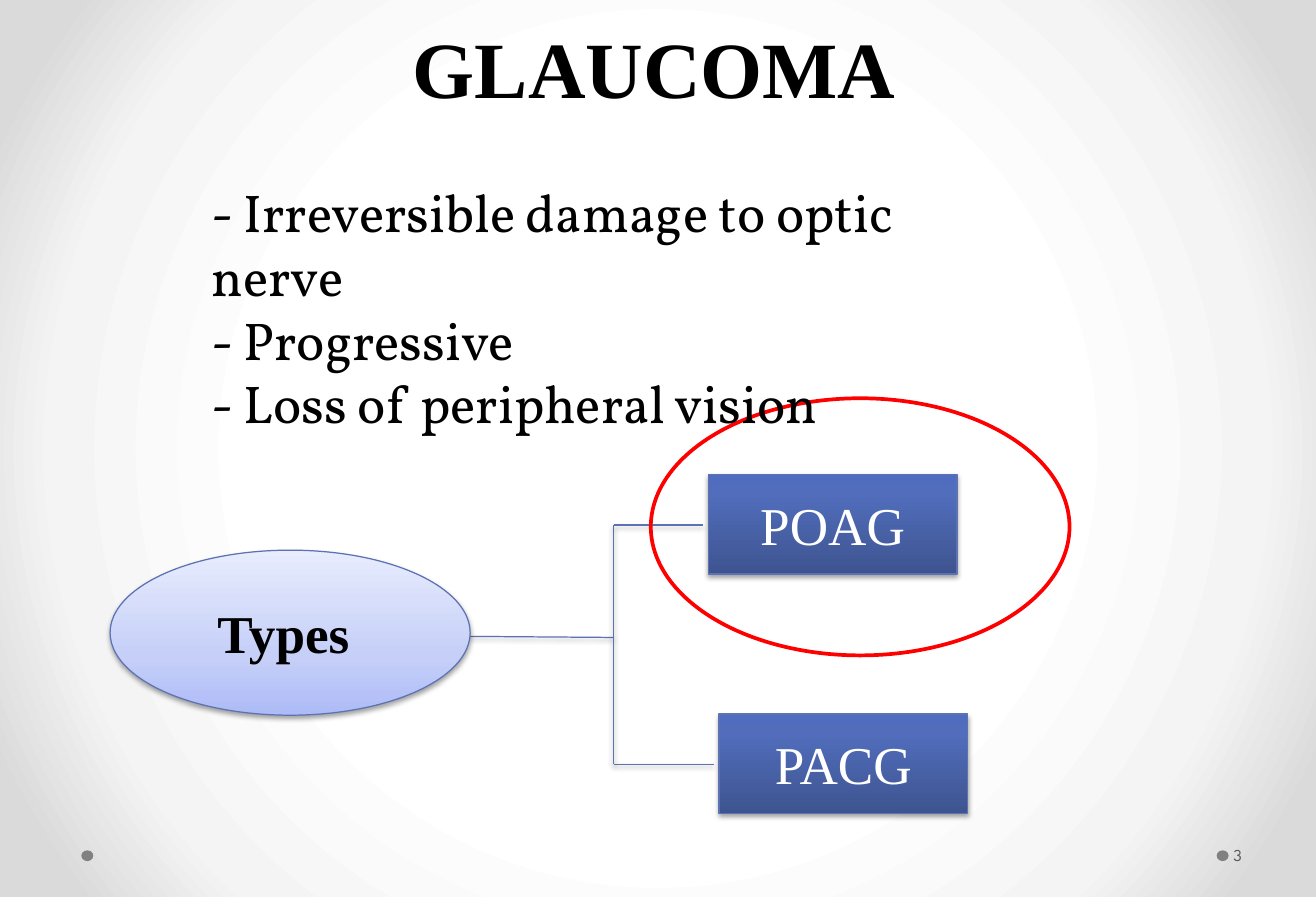
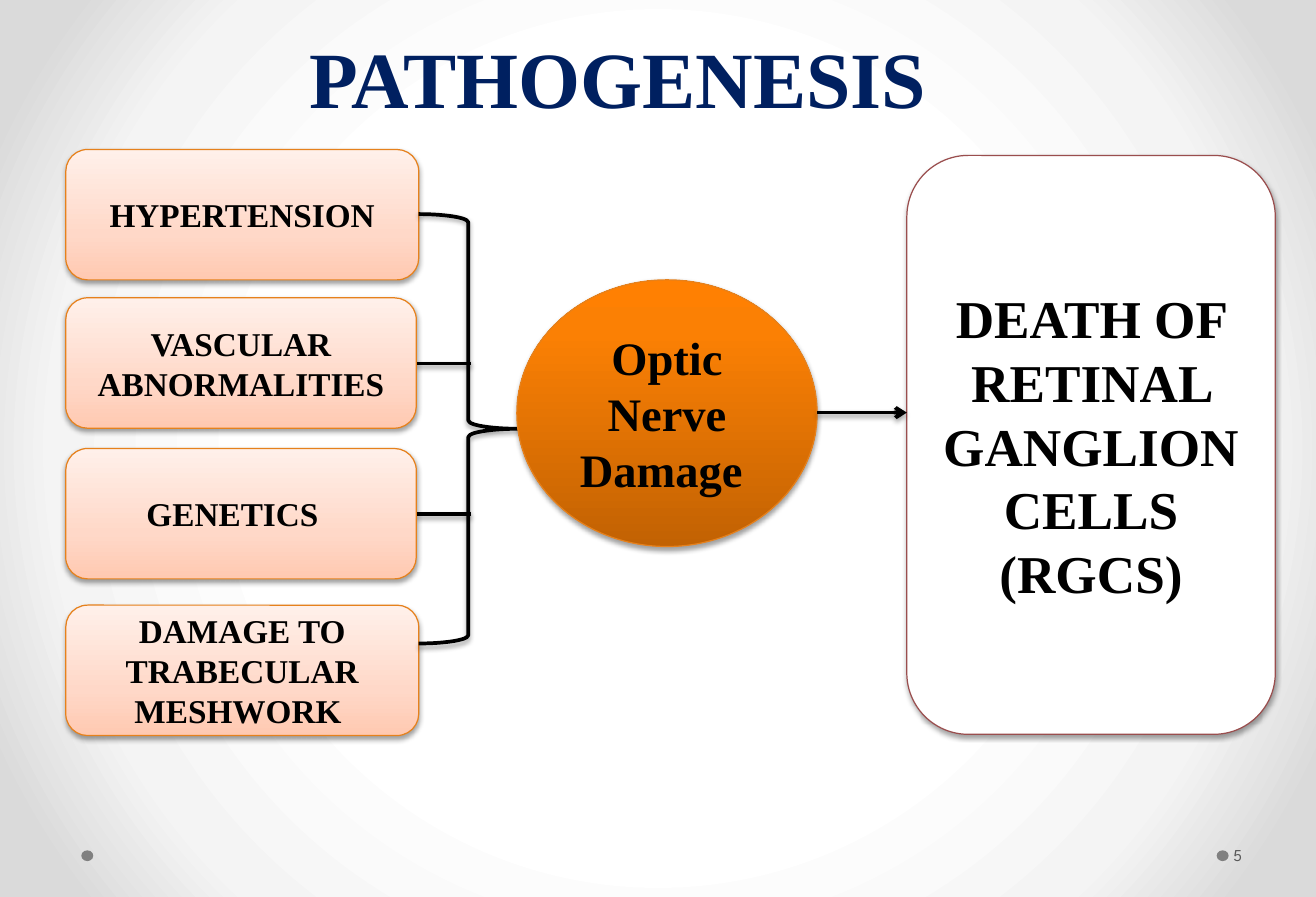
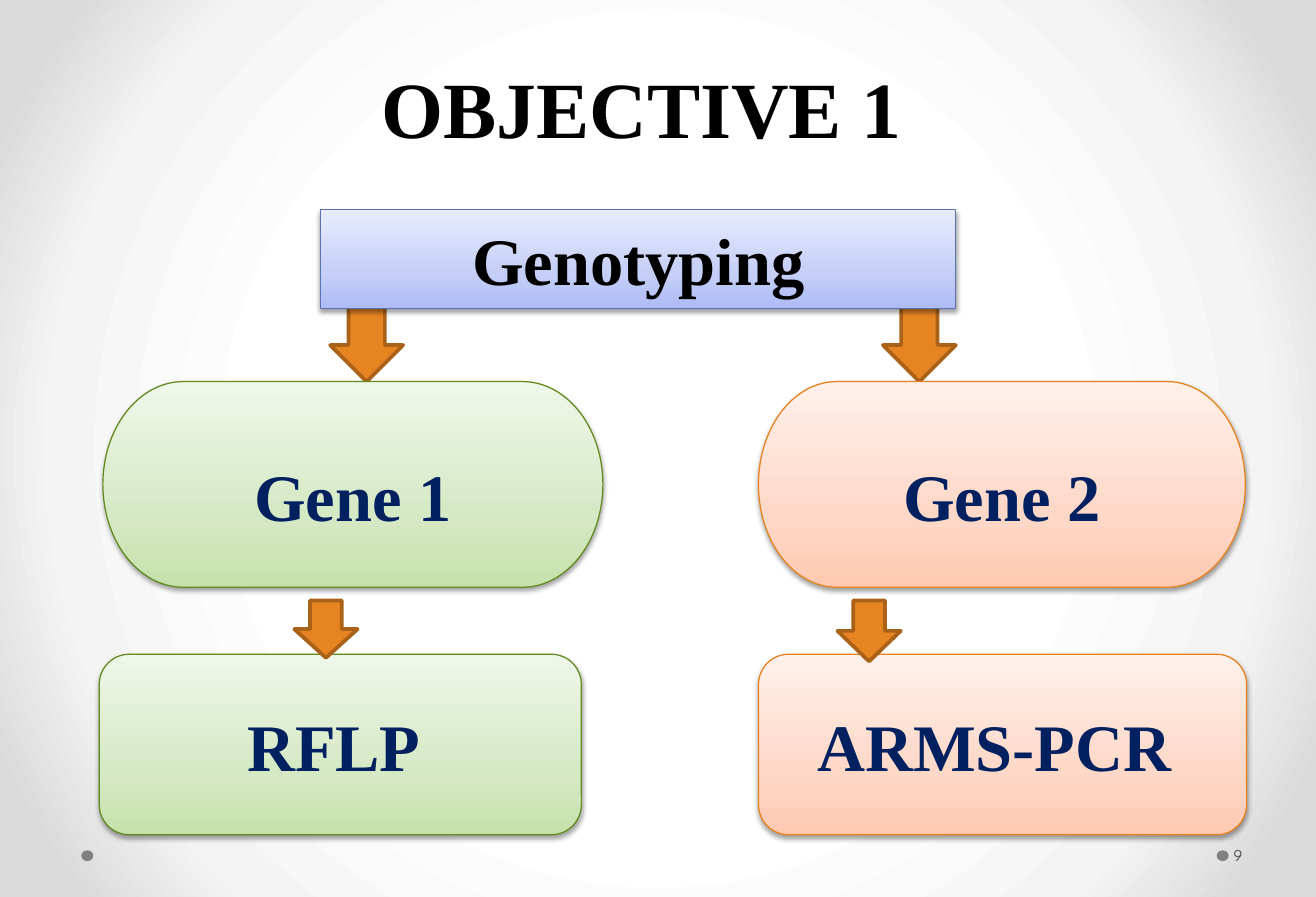
from lxml.etree import SubElement
from pptx import Presentation
from pptx.dml.color import RGBColor
from pptx.enum.shapes import MSO_CONNECTOR, MSO_SHAPE
from pptx.enum.text import MSO_ANCHOR, MSO_AUTO_SIZE, PP_ALIGN
from pptx.oxml import parse_xml
from pptx.oxml.ns import nsdecls, qn
from pptx.util import Pt

PX = 9144  # 100 px to the inch
LINE = MSO_CONNECTOR.STRAIGHT
SERIF = "Times New Roman"

BLACK = RGBColor(0x00, 0x00, 0x00)
WHITE = RGBColor(0xFF, 0xFF, 0xFF)
RED = RGBColor(0xFF, 0x00, 0x00)
NAVY = RGBColor(0x00, 0x20, 0x60)
DOT_GREY = RGBColor(0x80, 0x80, 0x80)
NUMBER_GREY = RGBColor(0x59, 0x59, 0x59)
BLUE_EDGE = RGBColor(0x5C, 0x72, 0xB2)
ORANGE_EDGE = RGBColor(0xE6, 0x81, 0x1C)
GREEN_EDGE = RGBColor(0x62, 0x89, 0x1C)
MAROON_EDGE = RGBColor(0x9A, 0x4E, 0x4E)
ARROW_FILL = RGBColor(0xE6, 0x84, 0x22)
ARROW_EDGE = RGBColor(0xAA, 0x62, 0x19)

# Gradients run from bottom to top: (position in percent, colour)
DEEP_BLUE = ((0, RGBColor(0x3E, 0x54, 0x90)), (80, RGBColor(0x51, 0x6D, 0xBB)), (100, RGBColor(0x4F, 0x6C, 0xBE)))
PALE_BLUE = ((0, RGBColor(0xAD, 0xBB, 0xF6)), (35, RGBColor(0xC5, 0xCF, 0xF8)), (100, RGBColor(0xE8, 0xEC, 0xFD)))
PEACH = ((0, RGBColor(0xFF, 0xC9, 0xB1)), (35, RGBColor(0xFF, 0xD8, 0xC8)), (100, RGBColor(0xFF, 0xF0, 0xEA)))
ORANGE = ((0, RGBColor(0xC2, 0x62, 0x03)), (80, RGBColor(0xFB, 0x80, 0x04)), (100, RGBColor(0xFF, 0x80, 0x02)))
GREEN = ((0, RGBColor(0xC5, 0xE1, 0xAB)), (35, RGBColor(0xD6, 0xE9, 0xC5)), (100, RGBColor(0xEF, 0xF7, 0xE9)))


def draw(slide, kind, box, fill=None, edge=None, width=0.75, shadow=True):
    """Add a shape (left, top, width, height) or a line (x1, y1, x2, y2)."""
    add = slide.shapes.add_connector if kind is LINE else slide.shapes.add_shape
    shape = add(kind, *[PX * value for value in box])
    properties = shape.element.spPr
    if isinstance(fill, RGBColor):
        shape.fill.solid()
        shape.fill.fore_color.rgb = fill
    elif fill:
        shape.fill.gradient()
        shape.fill.gradient_angle = 90
        stops = properties.find(".//" + qn("a:gsLst"))
        stops[:] = []
        for position, color in fill:
            stop = SubElement(stops, qn("a:gs"), pos=str(position * 1000))
            SubElement(stop, qn("a:srgbClr"), val=str(color))
    elif kind is not LINE:
        shape.fill.background()
    if edge is None:
        shape.line.fill.background()
    else:
        shape.line.color.rgb = edge
        shape.line.width = Pt(width)
    effects = SubElement(properties, qn("a:effectLst"))
    if shadow:
        outer = SubElement(effects, qn("a:outerShdw"), blurRad=str(Pt(3.1)), dist=str(Pt(1.7)),
                           dir="5400000", rotWithShape="0")
        color = SubElement(outer, qn("a:srgbClr"), val=str(BLACK))
        SubElement(color, qn("a:alpha"), val="37000")
    return shape


def write(shape, text, size, color=BLACK, bold=True, font=SERIF, align=PP_ALIGN.CENTER,
          anchor=MSO_ANCHOR.MIDDLE, margins=(10, 5, 10, 5)):
    """Set the text with one format; margins are left, top, right, bottom."""
    frame = shape.text_frame
    frame.text = text
    frame.word_wrap = True
    frame.auto_size = MSO_AUTO_SIZE.NONE
    frame.vertical_anchor = anchor
    (frame.margin_left, frame.margin_top,
     frame.margin_right, frame.margin_bottom) = [PX * value for value in margins]
    for paragraph in frame.paragraphs:
        paragraph.alignment = align
        for run in paragraph.runs:
            run.font.name = font
            run.font.size = Pt(size)
            run.font.bold = bold
            run.font.color.rgb = color


presentation = Presentation()
presentation.slide_width = 1100 * PX
presentation.slide_height = 750 * PX

# Shared background
master = presentation.slide_master
master.background.fill.solid()
background = master.element.find(".//" + qn("p:bgPr"))
background.replace(background[0], parse_xml(
    f'<a:gradFill {nsdecls("a")} rotWithShape="1"><a:gsLst>'
    '<a:gs pos="50000"><a:srgbClr val="FFFFFF"/></a:gs>'
    '<a:gs pos="76000"><a:srgbClr val="F4F4F4"/></a:gs>'
    '<a:gs pos="92000"><a:srgbClr val="DADADA"/></a:gs></a:gsLst>'
    '<a:path path="circle"><a:fillToRect l="50000" t="50000" r="50000" b="50000"/></a:path>'
    '</a:gradFill>'))

# Titles and page numbers; the right margin nudges a title to the left
TITLE_AND_BODY, TITLE_ONLY = 1, 5
slides = []
for layout, title, box, color, right, number in (
        (TITLE_AND_BODY, "GLAUCOMA", (52, -25, 990, 125), BLACK, 9, "3"),
        (TITLE_ONLY, "PATHOGENESIS", (38, 8, 990, 100), NAVY, 42, "5"),
        (TITLE_ONLY, "OBJECTIVE 1", (50, 25, 990, 108), BLACK, 26, "9")):
    slide = presentation.slides.add_slide(presentation.slide_layouts[layout])
    heading = slide.shapes.title
    heading.left, heading.top, heading.width, heading.height = [PX * value for value in box]
    write(heading, title, 48, color, anchor=MSO_ANCHOR.BOTTOM, margins=(9, 4, right, 4))
    heading.text_frame.paragraphs[0].line_spacing = Pt(49.7)
    page_number = slide.shapes.add_textbox(1028 * PX, 695 * PX, 68 * PX, 40 * PX)
    write(page_number, number, 10, NUMBER_GREY, False, "League Spartan", PP_ALIGN.LEFT, margins=(3, 4, 4, 4))
    slides.append(slide)
glaucoma, pathogenesis, objective = slides

# Footer dots belong to the master
for left in (1017, 68):
    dot = draw(glaucoma, MSO_SHAPE.OVAL, (left, 711, 10, 9), DOT_GREY, shadow=False)
    master.shapes.element.append(dot.element)

# Glaucoma: types tree
for ends in ((376, 532, 513, 533), (513, 439, 513, 639), (513, 439, 588, 439), (597, 639, 513, 639)):
    draw(glaucoma, LINE, ends, edge=BLUE_EDGE)
for name, left, top in (("POAG", 592, 397), ("PACG", 601, 597)):
    glaucoma_type = draw(glaucoma, MSO_SHAPE.RECTANGLE, (left, top, 208, 83), DEEP_BLUE, BLUE_EDGE)
    write(glaucoma_type, name, 32, WHITE, bold=False)
types = draw(glaucoma, MSO_SHAPE.OVAL, (92, 460, 301, 138), PALE_BLUE, BLUE_EDGE)
write(types, "Types ", 32)
draw(glaucoma, MSO_SHAPE.OVAL, (544, 333, 350, 215), edge=RED, width=2.25, shadow=False)

features = glaucoma.placeholders[1]
features.left, features.top, features.width, features.height = [PX * value for value in (167, 145, 680, 172)]
write(features, "- Irreversible damage to optic nerve\n- Progressive\n- Loss of peripheral vision",
      32, bold=False, font="Vollkorn", align=PP_ALIGN.LEFT, anchor=MSO_ANCHOR.TOP)
for paragraph in features.text_frame.paragraphs:
    paragraph.space_before = Pt(0)
    indents = paragraph._p.get_or_add_pPr()
    indents.set("marL", "0")
    indents.set("indent", "0")
    SubElement(indents, qn("a:buNone"))
glaucoma.shapes.element.append(features.element)  # in front of the red ring

# Pathogenesis: causes, nerve damage, outcome
for y in (304, 430):
    draw(pathogenesis, LINE, (348, y, 394, y), edge=BLACK, width=2.25)
for cause, top, width, right in (
        ("HYPERTENSION", 125, 295, 10),
        ("VASCULAR ABNORMALITIES", 249, 293, 10),
        ("GENETICS", 375, 293, 24),
        ("DAMAGE TO TRABECULAR MESHWORK ", 506, 295, 10)):
    cause_box = draw(pathogenesis, MSO_SHAPE.ROUNDED_RECTANGLE, (55, top, width, 109), PEACH, ORANGE_EDGE)
    write(cause_box, cause, 20, margins=(10, 5, right, 5))
draw(pathogenesis, MSO_SHAPE.RIGHT_BRACE, (350, 179, 83, 359), edge=BLACK, width=2.25)
nerve_damage = draw(pathogenesis, MSO_SHAPE.OVAL, (432, 234, 251, 223), ORANGE, ORANGE_EDGE)
write(nerve_damage, "Optic Nerve Damage ", 28)
cell_death = draw(pathogenesis, MSO_SHAPE.ROUNDED_RECTANGLE, (758, 130, 308, 484), WHITE, MAROON_EDGE)
write(cell_death, "DEATH OF RETINAL GANGLION CELLS (RGCS)", 32)
arrow = draw(pathogenesis, LINE, (683, 345, 758, 345), edge=BLACK, width=2.25)
SubElement(arrow.element.spPr.find(qn("a:ln")), qn("a:tailEnd"), type="arrow")

# Objective 1: genotyping splits into two genes, each with its method
for left in (738, 276):
    draw(objective, MSO_SHAPE.DOWN_ARROW, (left, 257, 61, 62), ARROW_FILL, ARROW_EDGE, 2.25, False)
genotyping = draw(objective, MSO_SHAPE.RECTANGLE, (268, 175, 531, 83), PALE_BLUE, BLUE_EDGE)
write(genotyping, "Genotyping", 40)
for gene, gene_left, gene_width, method, method_left, method_width, fill, edge in (
        ("Gene 1", 86, 418, "RFLP ", 83, 403, GREEN, GREEN_EDGE),
        ("Gene 2", 634, 407, "ARMS-PCR ", 634, 408, PEACH, ORANGE_EDGE)):
    gene_box = draw(objective, MSO_SHAPE.FLOWCHART_TERMINATOR, (gene_left, 319, gene_width, 172), fill, edge)
    write(gene_box, gene, 40, NAVY, margins=(10, 23, 10, 5))
    method_box = draw(objective, MSO_SHAPE.FLOWCHART_ALTERNATE_PROCESS,
                      (method_left, 547, method_width, 151), fill, edge)
    write(method_box, method, 40, NAVY)
for left, height in ((246, 48), (700, 51)):
    draw(objective, MSO_SHAPE.DOWN_ARROW, (left, 502, 53, height), ARROW_FILL, ARROW_EDGE, 2.25, False)

presentation.save("out.pptx")
